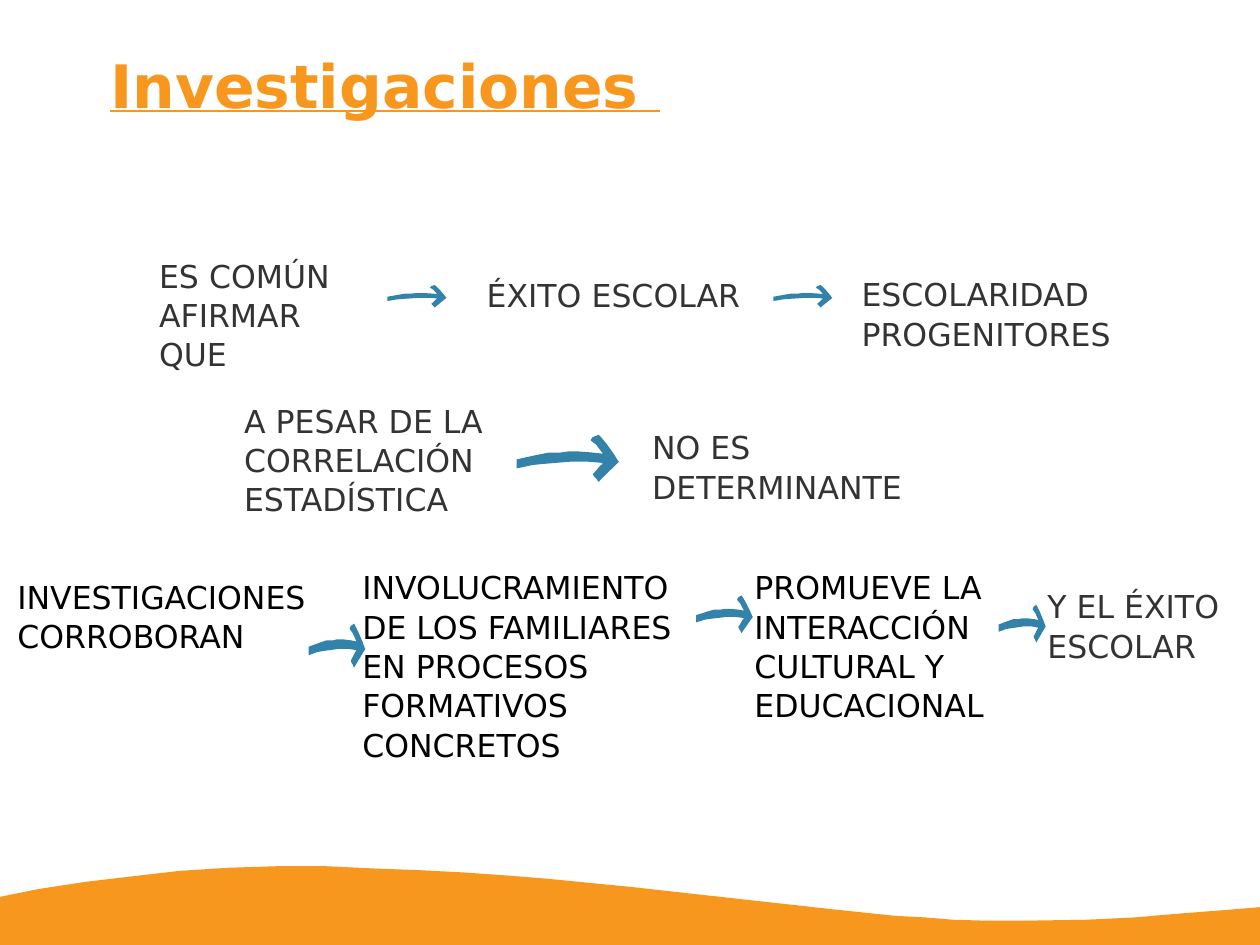
from pptx import Presentation
from pptx.dml.color import RGBColor
from pptx.enum.text import MSO_ANCHOR
from pptx.util import Pt

FONT = "DejaVu Sans"
ORANGE, BLUE, GRAY, BLACK = "F8971D", "3382AA", "333333", "000000"

WAVE = [
    (0, 569.5), (24.5, 564.5), (54, 560), (83.5, 556.5), (114, 553),
    (145, 551), (176, 550), (207, 550), (238, 551.5), (266, 552.5),
    (295, 554), (323, 556), (348, 558), (399, 563), (530, 577.5),
    (568, 581.5), (587, 582.5), (605, 584), (623, 584.5), (640, 584.6),
    (657, 584.5), (690, 584), (721, 582.5), (750, 580), (776, 578),
    (800, 576), (800, 600), (0, 600),
]

ARROW = [
    (0, 22), (9, 20), (18, 18), (28, 16), (38, 16), (45, 15), (55, 15),
    (68, 16), (76, 17), (70, 9), (65, 5), (67, 2), (70, 1), (72, 0),
    (74, 2), (79, 8), (86, 18), (89, 23), (90, 24), (84, 30), (78, 36),
    (72, 42), (70, 39), (68, 37), (67, 35), (69, 33), (74, 27), (76, 26),
    (74, 25), (62, 24), (48, 24), (36, 25), (24, 26), (14, 27), (5, 29),
    (0, 30),
]

ARROWS = [
    (246, 181, 37.5, 14.3), (491, 181, 37.5, 14.3), (328, 276, 65, 30),
    (196, 396, 36, 28), (442, 378, 36, 24), (634, 384, 30, 24),
]

LABELS = [
    ("ES COMÚN AFIRMAR QUE", (101, 162, 118, 78), GRAY),
    ("ÉXITO ESCOLAR", (309, 175, 168, 25), GRAY),
    ("ESCOLARIDAD PROGENITORES", (547, 174, 162, 50), GRAY),
    ("A PESAR DE LA CORRELACIÓN ESTADÍSTICA", (155, 254, 197, 82), GRAY),
    ("NO ES DETERMINANTE", (414, 271, 162, 50), GRAY),
    ("INVESTIGACIONES CORROBORAN", (11, 366, 203, 96), BLACK),
    ("INVOLUCRAMIENTO DE LOS FAMILIARES EN PROCESOS FORMATIVOS CONCRETOS",
     (230, 360, 212, 180), BLACK),
    ("PROMUEVE LA INTERACCIÓN CULTURAL Y EDUCACIONAL",
     (479, 360, 150, 132), BLACK),
    ("Y EL ÉXITO ESCOLAR", (665, 372, 118, 67), GRAY),
]


def color(code):
    return RGBColor.from_string(code)


def outline(slide, dots, fill):
    dots = [(Pt(x), Pt(y)) for x, y in dots]
    pen = slide.shapes.build_freeform(*dots[0])
    pen.add_line_segments(dots[1:], close=True)
    shape = pen.convert_to_shape()
    shape.shadow.inherit = False
    shape.fill.solid()
    shape.fill.fore_color.rgb = color(fill)
    shape.line.fill.background()


def arrow(slide, left, top, width, height):
    dots = [(left + x * width / 90, top + y * height / 42) for x, y in ARROW]
    outline(slide, dots, BLUE)


def text(slide, words, area, size=20, ink=GRAY, bold=False, under=False,
         space=1.04):
    frame = slide.shapes.add_textbox(*map(Pt, area)).text_frame
    frame.margin_left = frame.margin_right = 0
    frame.margin_top = frame.margin_bottom = 0
    frame.vertical_anchor = MSO_ANCHOR.TOP
    frame.word_wrap = True
    para = frame.paragraphs[0]
    para.line_spacing = space
    run = para.add_run()
    run.text = words
    font = run.font
    font.name, font.size = FONT, Pt(size)
    font.bold, font.underline = bold, under
    font.color.rgb = color(ink)


def main():
    deck = Presentation()
    deck.slide_width, deck.slide_height = Pt(800), Pt(600)
    slide = deck.slides.add_slide(deck.slide_layouts[6])
    outline(slide, WAVE, ORANGE)
    text(slide, "Investigaciones ", (70, 31, 661, 45), size=38, ink=ORANGE,
         bold=True, under=True, space=Pt(45.5))
    for words, area, ink in LABELS:
        text(slide, words, area, ink=ink,
             space=1 if words == "ÉXITO ESCOLAR" else 1.04)
    for area in ARROWS:
        arrow(slide, *area)
    deck.save("out.pptx")


if __name__ == "__main__":
    main()
